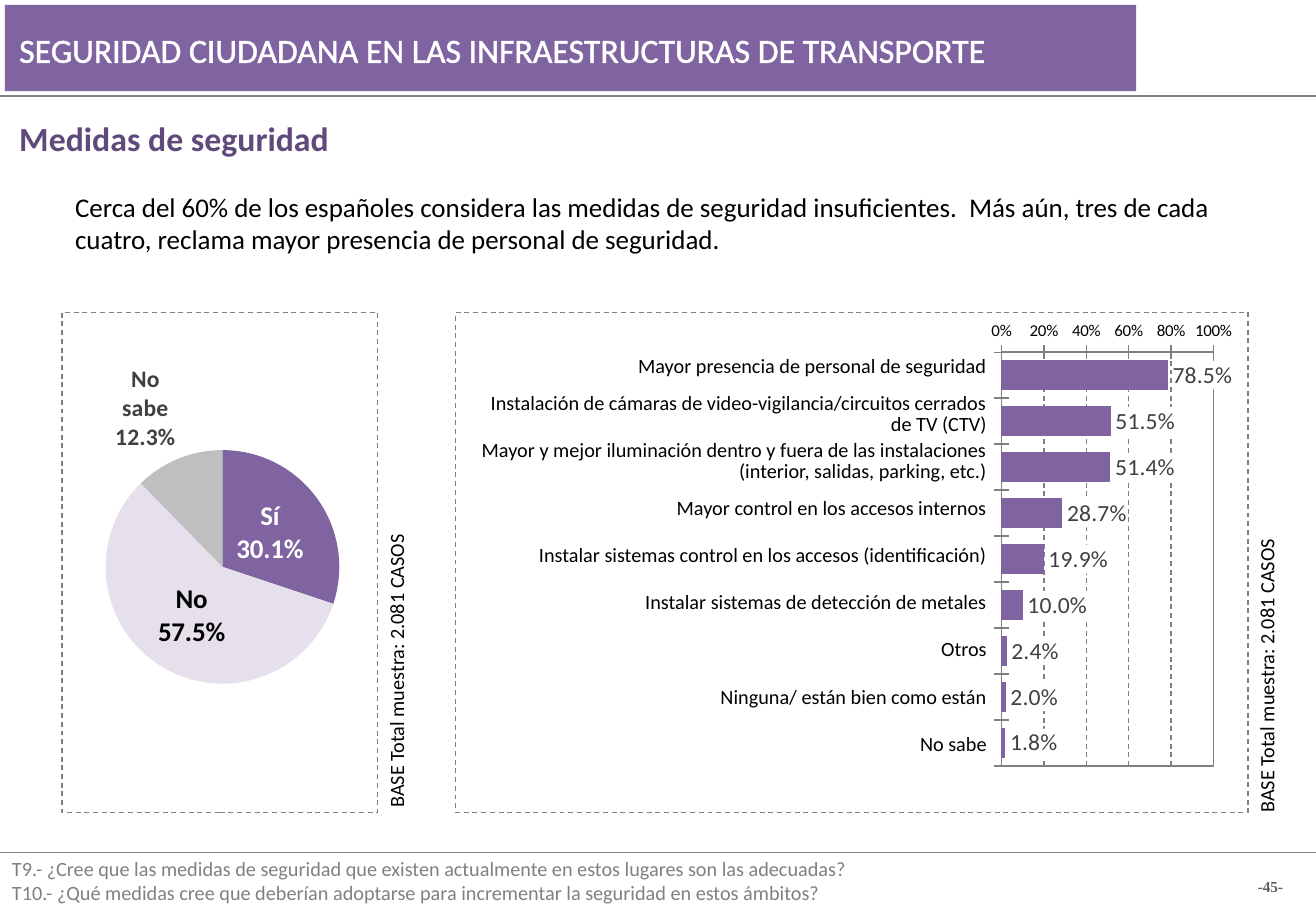
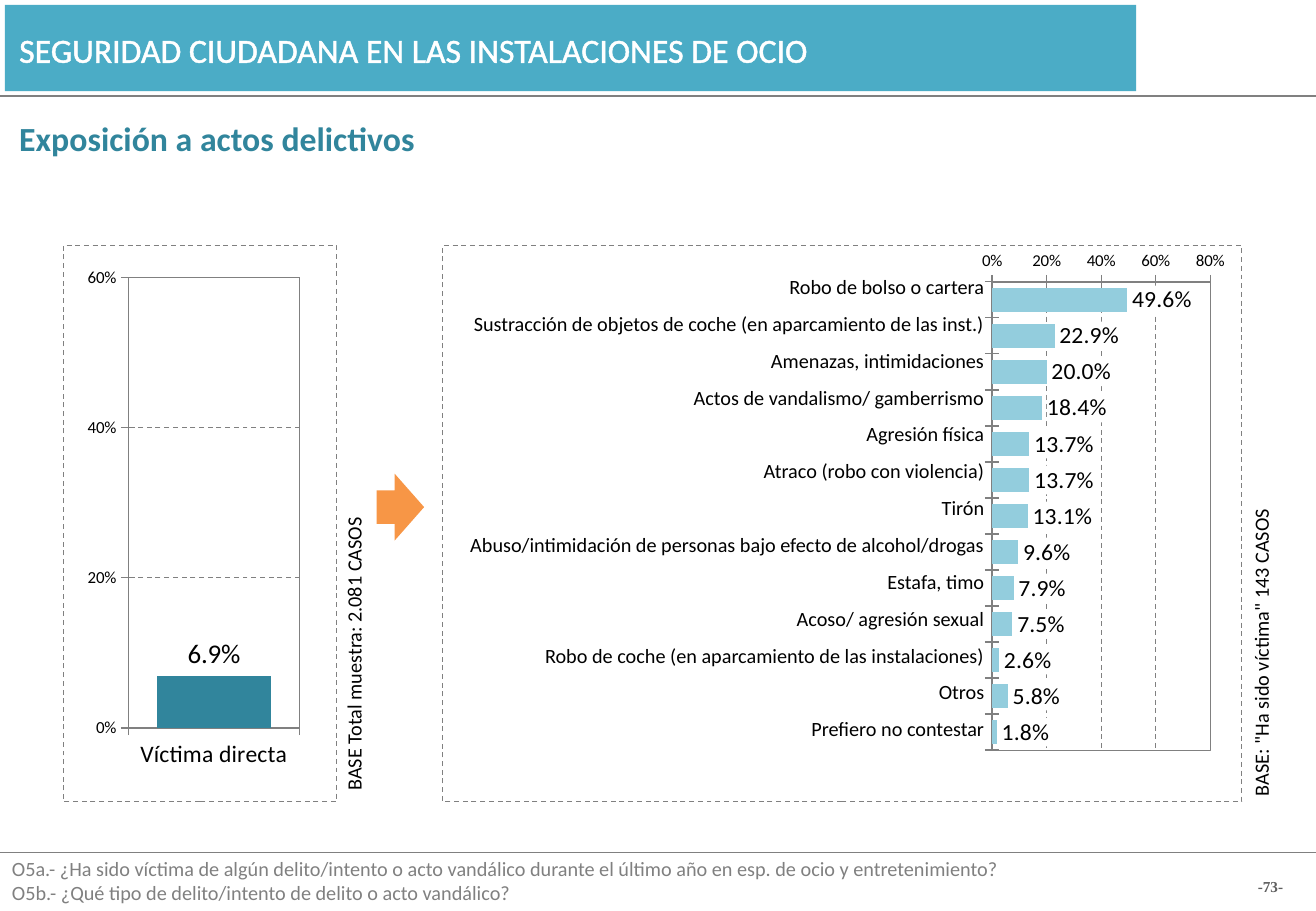
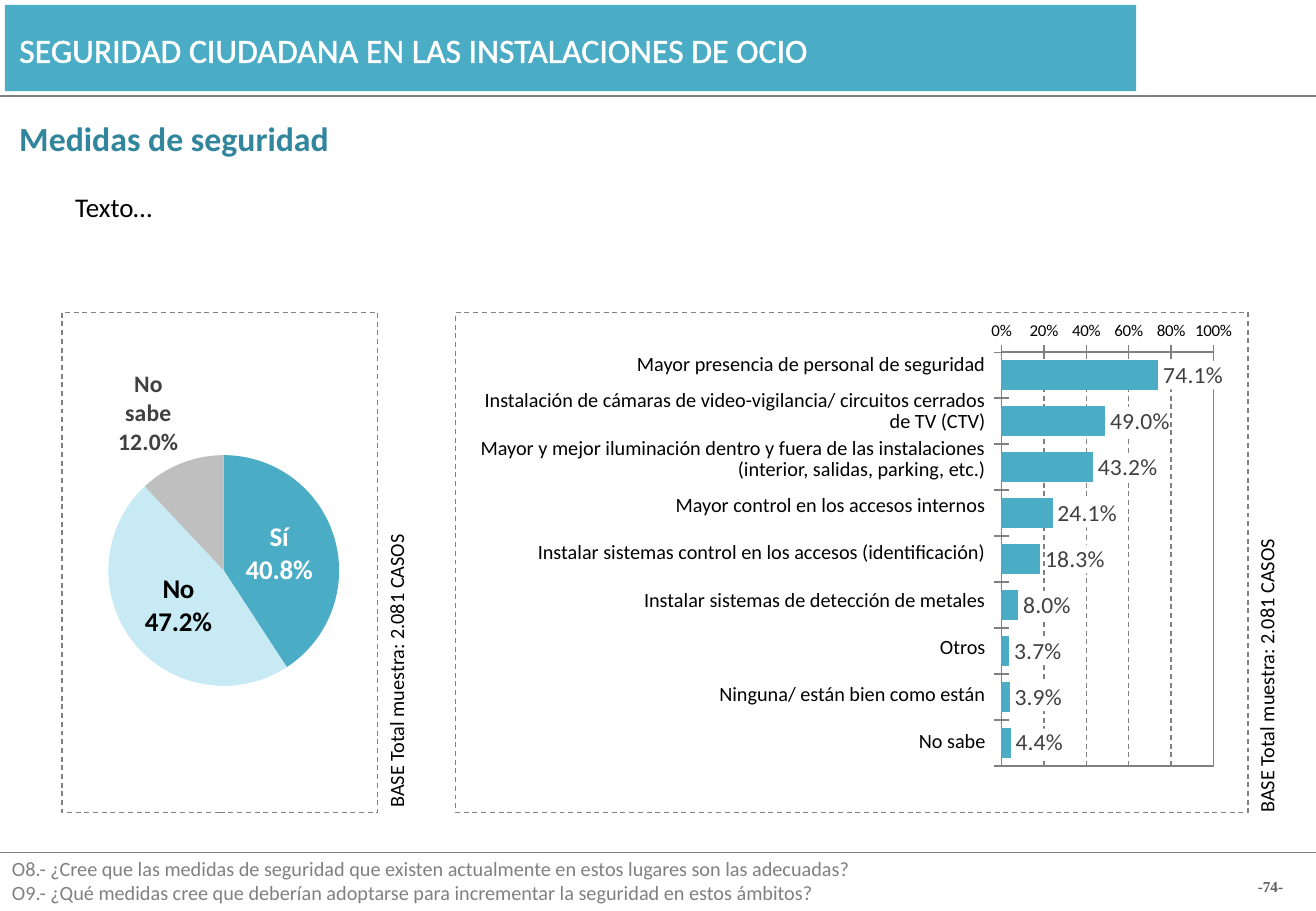
from lxml import etree
from pptx import Presentation
from pptx import util as u
from pptx.chart.data import CategoryChartData
from pptx.dml.color import RGBColor
from pptx.enum import chart as ch, dml, shapes, text
from pptx.oxml import parse_xml
from pptx.oxml.ns import nsdecls, qn

COLORS = {
    "white": "FFFFFF", "black": "000000", "gray": "808080", "label": "404040",
    "page": "5F5F5F", "unsure": "BFBFBF", "orange": "F79646",
    "purple": "8064A2", "purple_dark": "604A7B", "purple_pale": "E6E0EC",
    "teal": "4BACC6", "teal_dark": "31859C", "teal_pale": "C7EAF5", "teal_mid": "93CDDD",
}
LEISURE = "SEGURIDAD CIUDADANA EN LAS INSTALACIONES DE OCIO"
SAMPLE = "BASE Total muestra: 2.081 CASOS"
ANSWERS = ["Sí", "No", "No sabe"]
ONE_DECIMAL, WHOLE = r"0.0\%", r"0\%"

# Content of the two slides about security measures
MEASURES = [
    "Mayor presencia de personal de seguridad",
    "Instalación de cámaras de video-vigilancia/ circuitos cerrados de TV (CTV)",
    "Mayor y mejor iluminación dentro y fuera de las instalaciones (interior, salidas, parking, etc.)",
    "Mayor control en los accesos internos",
    "Instalar sistemas control en los accesos (identificación)",
    "Instalar sistemas de detección de metales",
    "Otros",
    "Ninguna/ están bien como están",
    "No sabe",
]
TRANSPORT = {
    "title": "SEGURIDAD CIUDADANA EN LAS INFRAESTRUCTURAS DE TRANSPORTE",
    "subtitle": "Medidas de seguridad", "page": "-45-",
    "band": "purple", "dark": "purple_dark", "pale": "purple_pale",
    "questions": [
        "T9.- ¿Cree que las medidas de seguridad que existen actualmente en estos lugares son las adecuadas?",
        "T10.- ¿Qué medidas cree que deberían adoptarse para incrementar la seguridad en estos ámbitos?"],
    "comment": "Cerca del 60% de los españoles considera las medidas de seguridad insuficientes.  "
               "Más aún, tres de cada cuatro, reclama mayor presencia de personal de seguridad.",
    "pie": [30.1, 57.5, 12.3], "pie_box": (0.25, 2.74, 3.26, 3.78),
    "measures": [m.replace("vigilancia/ ", "vigilancia/") for m in MEASURES],
    "table_box": (3.88, 2.83, 4.24, 3.5),
    "bars": [78.5, 51.5, 51.4, 28.7, 19.9, 10, 2.4, 2, 1.8],
}
LEISURE_MEASURES = {
    "title": LEISURE, "subtitle": "Medidas de seguridad", "page": "-74-",
    "band": "teal", "dark": "teal_dark", "pale": "teal_pale",
    "questions": [
        "O8.- ¿Cree que las medidas de seguridad que existen actualmente en estos lugares son las adecuadas?",
        "O9.- ¿Qué medidas cree que deberían adoptarse para incrementar la seguridad en estos ámbitos?"],
    "comment": "Texto…",
    "pie": [40.8, 47.2, 12], "pie_box": (0.28, 2.77, 3.22, 3.78),
    "measures": MEASURES, "table_box": (3.92, 2.81, 4.19, 3.5),
    "bars": [74.1, 49, 43.2, 24.1, 18.3, 8, 3.7, 3.9, 4.4],
}

# Content of the slide about crime
LEISURE_CRIME = {
    "title": LEISURE, "subtitle": "Exposición a actos delictivos", "page": "-73-",
    "band": "teal", "dark": "teal_dark",
    "questions": [
        "O5a.- ¿Ha sido víctima de algún delito/intento o acto vandálico durante el último año "
        "en esp. de ocio y entretenimiento?",
        "O5b.- ¿Qué tipo de delito/intento de delito o acto vandálico?"],
    "crimes": [
        ("Robo de bolso o cartera", 49.6),
        ("Sustracción de objetos de coche (en aparcamiento de las inst.)", 22.9),
        ("Amenazas, intimidaciones", 20),
        ("Actos de vandalismo/ gamberrismo", 18.4),
        ("Agresión física", 13.7),
        ("Atraco (robo con violencia)", 13.7),
        ("Tirón", 13.1),
        ("Abuso/intimidación de personas bajo efecto de alcohol/drogas", 9.6),
        ("Estafa, timo", 7.9),
        ("Acoso/ agresión sexual", 7.5),
        ("Robo de coche (en aparcamiento de las instalaciones)", 2.6),
        ("Otros", 5.8),
        ("Prefiero no contestar", 1.8),
    ],
}


def rgb(name):
    return RGBColor.from_string(COLORS[name])


def inches(box):
    return [u.Inches(value) for value in box]


def set_font(font, size, color="black", bold=False, name="Calibri"):
    font.size, font.bold, font.name = u.Pt(size), bold, name
    font.color.rgb = rgb(color)


def set_line(line, dash=True):
    line.color.rgb = rgb("gray")
    line.width = u.Pt(0.75)
    if dash:
        line.dash_style = dml.MSO_LINE.DASH


# Text, shapes and table
def write(frame, lines, size, color="black", bold=False, name="Calibri",
          align=None, spacing=None, outline=False):
    frame.word_wrap = True
    for index, line in enumerate([lines] if isinstance(lines, str) else lines):
        paragraph = frame.add_paragraph() if index else frame.paragraphs[0]
        paragraph.alignment, paragraph.line_spacing = align, spacing
        run = paragraph.add_run()
        run.text = line
        set_font(run.font, size, color, bold, name)
        if outline:
            run._r.get_or_add_rPr().insert(0, parse_xml(
                f'<a:ln {nsdecls("a")} w="9525"><a:solidFill>'
                f'<a:srgbClr val="{COLORS[color]}"/></a:solidFill></a:ln>'))


def add_text(slide, box, lines, size, rotation=0, margins=None, middle=False, **style):
    shape = slide.shapes.add_textbox(*inches(box))
    shape.rotation = rotation
    frame = shape.text_frame
    if margins:
        side, end = inches(margins)
        frame.margin_left = frame.margin_right = side
        frame.margin_top = frame.margin_bottom = end
    elif middle:
        frame.margin_left = frame.margin_right = frame.margin_top = frame.margin_bottom = 0
    if middle:
        frame.vertical_anchor = text.MSO_ANCHOR.MIDDLE
    write(frame, lines, size, **style)


def add_base_note(slide, box, note):
    add_text(slide, box, note, 12, rotation=270, margins=(0.04, 0.05), middle=True)


def add_block(slide, box, color, kind=shapes.MSO_SHAPE.RECTANGLE, dashed=False):
    shape = slide.shapes.add_shape(kind, *inches(box))
    shape.shadow.inherit = False
    shape.fill.solid()
    shape.fill.fore_color.rgb = rgb(color)
    if dashed:
        set_line(shape.line)
    else:
        shape.line.fill.background()
    return shape


def add_label_table(slide, box, labels):
    table = slide.shapes.add_table(len(labels), 1, *inches(box)).table
    table.first_row = table.horz_banding = False
    for row, label in zip(table.rows, labels):
        row.height = u.Inches(box[3] / len(labels))
        cell = row.cells[0]
        cell.fill.background()
        cell.margin_left = cell.margin_right = cell.margin_top = cell.margin_bottom = 0
        cell.vertical_anchor = text.MSO_ANCHOR.MIDDLE
        write(cell.text_frame, label, 12, align=text.PP_ALIGN.RIGHT, spacing=0.85)


# Charts
def add_chart(slide, kind, box, categories, values, layout):
    data = CategoryChartData()
    data.categories = categories
    data.add_series("Series 1", values)
    chart = slide.shapes.add_chart(kind, *inches(box), data).chart
    chart.has_title = chart.has_legend = False
    set_font(chart.font, 12)
    # Transparent background and fixed inner plot area
    chart.element.find(qn("c:chart")).addnext(parse_xml(
        f'<c:spPr {nsdecls("c", "a")}><a:noFill/><a:ln><a:noFill/></a:ln></c:spPr>'))
    area = chart.element.find(".//" + qn("c:plotArea"))
    for old in area.findall(qn("c:layout")):
        area.remove(old)
    sides = "".join(f'<c:{key} val="{value}"/>' for key, value in zip("xywh", layout))
    area.insert(0, parse_xml(
        f'<c:layout {nsdecls("c")}><c:manualLayout><c:layoutTarget val="inner"/>'
        f'<c:xMode val="edge"/><c:yMode val="edge"/>{sides}</c:manualLayout></c:layout>'))
    return chart, area


def add_bars(slide, kind, box, categories, values, layout, color, maximum,
             label_size=14, label_color="black"):
    chart, area = add_chart(slide, kind, box, categories, values, layout)
    area.append(parse_xml(
        f'<c:spPr {nsdecls("c", "a")}><a:noFill/><a:ln w="9525"><a:solidFill>'
        f'<a:srgbClr val="{COLORS["gray"]}"/></a:solidFill></a:ln></c:spPr>'))
    plot = chart.plots[0]
    plot.gap_width, plot.vary_by_categories = 50, False
    fill = plot.series[0].format.fill
    fill.solid()
    fill.fore_color.rgb = rgb(color)
    # Value labels on white, so that grid lines stop behind them
    labels = plot.series[0].data_labels
    labels.show_value = True
    labels.number_format, labels.number_format_is_linked = ONE_DECIMAL, False
    labels.position = ch.XL_LABEL_POSITION.OUTSIDE_END
    set_font(labels.font, label_size, label_color)
    area.find(f'.//{qn("c:dLbls")}/{qn("c:numFmt")}').addnext(parse_xml(
        f'<c:spPr {nsdecls("c", "a")}><a:solidFill><a:srgbClr val="{COLORS["white"]}"/>'
        f'</a:solidFill></c:spPr>'))
    # Axes
    value_axis, category_axis = chart.value_axis, chart.category_axis
    for axis, size in ((value_axis, 10), (category_axis, 14)):
        axis.major_tick_mark = ch.XL_TICK_MARK.CROSS
        set_line(axis.format.line, dash=False)
        set_font(axis.tick_labels.font, size)
    value_axis.minimum_scale, value_axis.maximum_scale, value_axis.major_unit = 0, maximum, 20
    value_axis.has_major_gridlines = True
    set_line(value_axis.major_gridlines.format.line)
    value_axis.tick_labels.number_format = WHOLE
    value_axis.tick_labels.number_format_is_linked = False
    if kind == ch.XL_CHART_TYPE.BAR_CLUSTERED:
        category_axis.reverse_order = True
        category_axis.crosses = ch.XL_AXIS_CROSSES.MAXIMUM
        category_axis.tick_label_position = ch.XL_TICK_LABEL_POSITION.NONE


def add_pie(slide, box, values, colors):
    chart, area = add_chart(slide, ch.XL_CHART_TYPE.PIE, box, ANSWERS, values,
                            (0.19, 0.16, 0.59, 0.7))
    place = ch.XL_LABEL_POSITION
    label_styles = [(place.CENTER, 16, "white"), (place.CENTER, 16, "black"),
                    (place.OUTSIDE_END, 14, "label")]
    points = chart.plots[0].series[0].points
    for index, (color, (position, size, font_color)) in enumerate(zip(colors, label_styles)):
        fill = points[index].format.fill
        fill.solid()
        fill.fore_color.rgb = rgb(color)
        label = points[index].data_label
        set_font(label.font, size, font_color, bold=True)
        label.position = position
    # Each label shows the answer above its value
    for label in area.iter(qn("c:dLbl")):
        label.insert(1, parse_xml(
            f'<c:numFmt {nsdecls("c")} formatCode="{ONE_DECIMAL}" sourceLinked="0"/>'))
        label.find(qn("c:showCatName")).set("val", "1")
        separator = etree.SubElement(label, qn("c:separator"))
        separator.text = "\n"


# Slides
def add_framed_slide(presentation, content):
    slide = presentation.slides.add_slide(presentation.slide_layouts[6])
    for y in (0.79, 7.02):
        rule = slide.shapes.add_connector(shapes.MSO_CONNECTOR.STRAIGHT,
                                          *inches((0, y, 10.83, y)))
        set_line(rule.line, dash=False)
        etree.SubElement(rule.element.spPr, qn("a:effectLst"))
    add_block(slide, (0.04, 0.04, 9.31, 0.71), content["band"])
    add_text(slide, (0.06, 0.19, 8.5, 0.44), content["title"], 20, color="white", outline=True)
    add_text(slide, (0.06, 0.92, 9.45, 0.44), content["subtitle"], 20,
             color=content["dark"], bold=True)
    add_text(slide, (0, 7, 8.57, 0.5), content["questions"], 12, color="gray")
    add_text(slide, (10.18, 7.22, 0.55, 0.15), content["page"], 9, middle=True, color="page",
             bold=True, name="Times New Roman", align=text.PP_ALIGN.CENTER)
    return slide


def add_measures_slide(presentation, content):
    slide = add_framed_slide(presentation, content)
    add_text(slide, (0.52, 1.52, 9.7, 0.64), content["comment"], 16)
    for left, width in ((0.51, 2.6), (3.75, 6.52)):
        add_block(slide, (left, 2.57, width, 4.12), "white", dashed=True)
    add_pie(slide, content["pie_box"], content["pie"],
            (content["band"], content["pale"], "unsure"))
    add_bars(slide, ch.XL_CHART_TYPE.BAR_CLUSTERED, (8.07, 2.65, 2.86, 4.01),
             content["measures"], content["bars"], (0.06, 0.04, 0.61, 0.87),
             content["band"], 100, label_color="label")
    add_label_table(slide, content["table_box"], content["measures"])
    add_base_note(slide, (1.65, 4.93, 3.22, 0.3), SAMPLE)
    add_base_note(slide, (8.81, 4.97, 3.22, 0.3), SAMPLE)


def add_crime_slide(presentation, content):
    slide = add_framed_slide(presentation, content)
    for left, width in ((0.52, 2.25), (3.64, 6.58)):
        add_block(slide, (left, 2.02, width, 4.58), "white", dashed=True)
    add_bars(slide, ch.XL_CHART_TYPE.COLUMN_CLUSTERED, (0.06, 2.06, 3.21, 4.47),
             ["Víctima directa"], [6.9], (0.31, 0.05, 0.44, 0.83), "teal_dark", 60,
             label_size=16)
    crimes, values = zip(*content["crimes"])
    add_label_table(slide, (3.82, 2.22, 4.28, 3.95), crimes)
    add_bars(slide, ch.XL_CHART_TYPE.BAR_CLUSTERED, (8.05, 2.07, 2.85, 4.41),
             crimes, values, (0.04, 0.04, 0.63, 0.89), "teal_mid", 80)
    arrow = add_block(slide, (3.1, 3.9, 0.39, 0.55), "orange", shapes.MSO_SHAPE.RIGHT_ARROW)
    arrow.adjustments[1] = 0.62
    add_base_note(slide, (1.3, 4.79, 3.22, 0.3), SAMPLE)
    add_base_note(slide, (9.09, 5.16, 2.57, 0.3), 'BASE: "Ha sido víctima" 143 CASOS')


def main():
    presentation = Presentation()
    presentation.slide_width, presentation.slide_height = inches((10.83, 7.5))
    add_measures_slide(presentation, TRANSPORT)
    add_crime_slide(presentation, LEISURE_CRIME)
    add_measures_slide(presentation, LEISURE_MEASURES)
    presentation.save("out.pptx")


if __name__ == "__main__":
    main()
